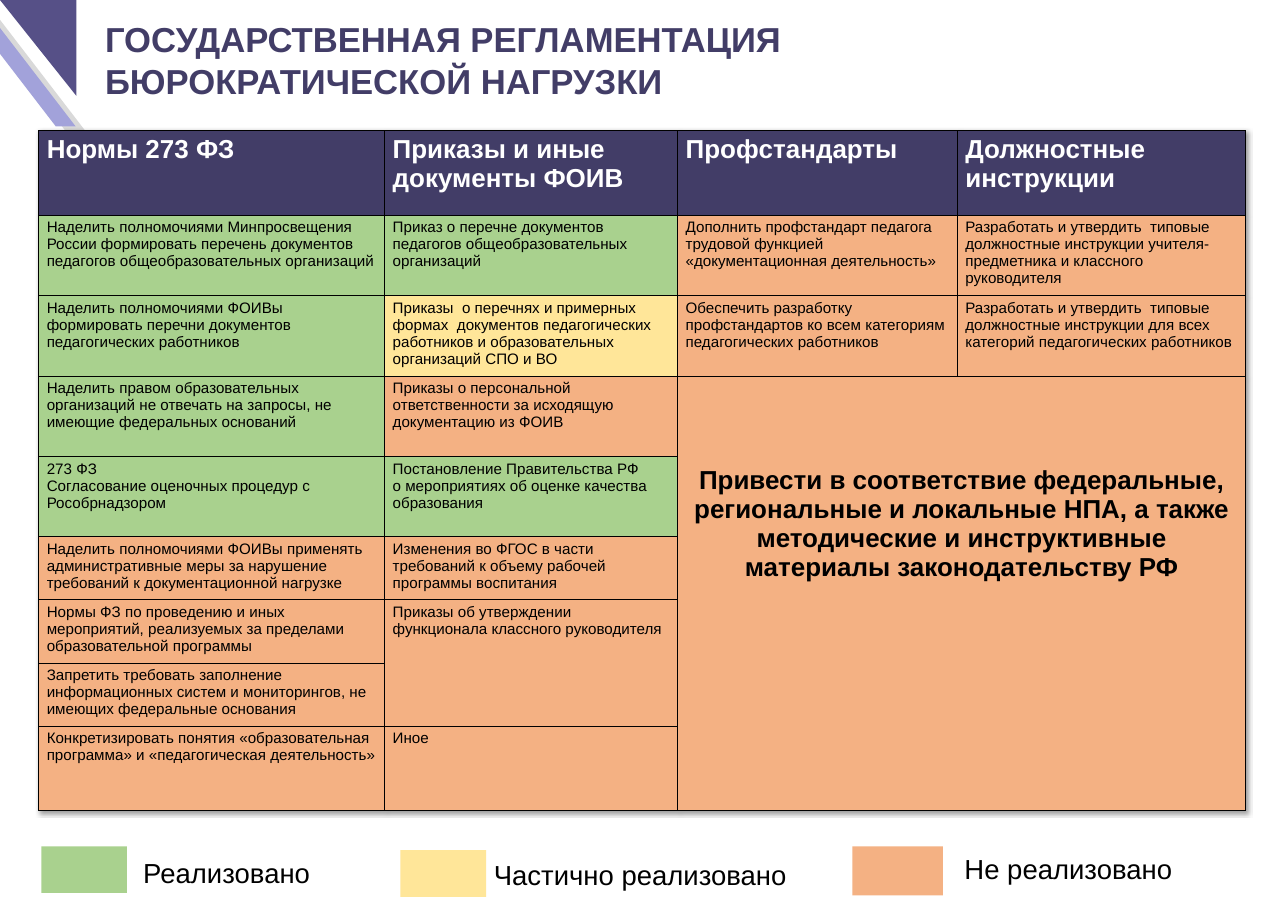
"""Build the slide on state regulation of the bureaucratic load."""
import lxml.etree
import pptx
import pptx.dml.color
import pptx.enum.shapes
import pptx.enum.text
import pptx.oxml
import pptx.oxml.ns
import pptx.util

RGB = pptx.dml.color.RGBColor
SHAPE = pptx.enum.shapes.MSO_SHAPE
ALIGN = pptx.enum.text.PP_ALIGN
INCH = pptx.util.Inches

NAVY = RGB(0x42, 0x3D, 0x67)
PURPLE = RGB(0x56, 0x50, 0x87)
LILAC = RGB(0xA2, 0xA2, 0xDA)
GREY = RGB(0xD9, 0xD9, 0xD9)
GREEN = RGB(0xA9, 0xD1, 0x8E)
YELLOW = RGB(0xFF, 0xE6, 0x99)
ORANGE = RGB(0xF4, 0xB1, 0x83)
BLACK = RGB(0, 0, 0)
WHITE = RGB(255, 255, 255)

COLS = [4.44, 3.76, 3.59, 3.69]
ROWS = [1.08] + [1.03] * 4 + [0.81] * 3 + [1.08]

HEADS = ["Нормы 273 ФЗ", "Приказы и иные документы ФОИВ",
         "Профстандарты", "Должностные инструкции"]
GOAL = ("Привести в соответствие федеральные, региональные и локальные НПА, "
        "а также методические и инструктивные материалы законодательству РФ")
NORMS = [
    ("Наделить полномочиями Минпросвещения России формировать перечень "
     "документов педагогов общеобразовательных организаций", GREEN),
    ("Наделить полномочиями ФОИВы\n"
     "формировать перечни документов педагогических работников", GREEN),
    ("Наделить правом образовательных организаций не отвечать на запросы, "
     "не имеющие федеральных оснований", GREEN),
    ("273 ФЗ\nСогласование оценочных процедур с Рособрнадзором", GREEN),
    ("Наделить полномочиями ФОИВы применять административные меры "
     "за нарушение требований к документационной нагрузке", ORANGE),
    ("Нормы ФЗ по проведению и иных мероприятий, реализуемых "
     "за пределами образовательной программы", ORANGE),
    ("Запретить требовать заполнение информационных систем и мониторингов, "
     "не имеющих федеральные основания", ORANGE),
    ("Конкретизировать понятия «образовательная программа» "
     "и «педагогическая деятельность»", ORANGE),
]
ORDERS = [
    ("Приказ о перечне документов педагогов общеобразовательных организаций",
     GREEN),
    ("Приказы  о перечнях и примерных формах  документов педагогических "
     "работников и образовательных организаций СПО и ВО", YELLOW),
    ("Приказы о персональной ответственности за исходящую документацию "
     "из ФОИВ", ORANGE),
    ("Постановление Правительства РФ\n"
     "о мероприятиях об оценке качества образования", GREEN),
    ("Изменения во ФГОС в части требований к объему рабочей программы "
     "воспитания", ORANGE),
    ("Приказы об утверждении функционала классного руководителя", ORANGE),
    ("", ORANGE),
    ("Иное", ORANGE),
]
SKILLS = [
    ("Дополнить профстандарт педагога трудовой функцией "
     "«документационная деятельность»", ORANGE),
    ("Обеспечить разработку профстандартов ко всем категориям "
     "педагогических работников", ORANGE),
    (GOAL, ORANGE),
]
DUTIES = [
    ("Разработать и утвердить  типовые должностные инструкции "
     "учителя-предметника и классного руководителя", ORANGE),
    ("Разработать и утвердить  типовые должностные инструкции для всех "
     "категорий педагогических работников", ORANGE),
]
LEGEND = [
    ((0.53, 10.86, 1.1, 0.6), GREEN, "Реализовано", (1.74, 10.93, 2.36, 0.53)),
    ((5.14, 10.91, 1.1, 0.6), YELLOW, "Частично реализовано",
     (6.24, 10.96, 4, 0.53)),
    ((10.94, 10.86, 1.16, 0.63), ORANGE, "Не реализовано",
     (12.28, 10.89, 2.9, 0.53)),
]


def put_text(frame, text, size, color, bold=False, align=ALIGN.LEFT):
    """Fill a text frame, one paragraph per line."""
    frame.text = text
    for par in frame.paragraphs:
        par.alignment = align
        par.font.name = "Arial"
        par.font.size = pptx.util.Pt(size)
        par.font.bold = bold
        par.font.color.rgb = color


def add_label(slide, area, text, size, color, bold=False, wrap=False):
    """Add a text box."""
    frame = slide.shapes.add_textbox(*map(INCH, area)).text_frame
    frame.word_wrap = wrap
    put_text(frame, text, size, color, bold)


def add_block(slide, kind, area, color):
    """Add a plain filled shape."""
    shape = slide.shapes.add_shape(kind, *map(INCH, area))
    shape.shadow.inherit = False
    shape.fill.solid()
    shape.fill.fore_color.rgb = color
    shape.line.fill.background()
    return shape


def add_corner(slide):
    """Draw the slanted stripes and triangle in the top left corner."""
    for left, top, color in [(-0.35, 0.13, GREY), (-0.53, 0, LILAC)]:
        band = add_block(slide, SHAPE.PARALLELOGRAM,
                         (left, top, 1.5, 1.62), color)
        band.adjustments[0] = 0.83
        band.element.spPr.xfrm.set("flipH", "1")
    wedge = add_block(slide, SHAPE.RIGHT_TRIANGLE, (0, 0, 0.98, 1.23), PURPLE)
    wedge.rotation = 180


def add_edges(cell):
    """Give a cell thin black borders."""
    props = cell._tc.get_or_add_tcPr()
    for side in "LRTB":
        props.append(pptx.oxml.parse_xml(
            f'<a:ln{side} {pptx.oxml.ns.nsdecls("a")} w="12700"><a:solidFill>'
            f'<a:srgbClr val="{BLACK}"/></a:solidFill></a:ln{side}>'))


def add_shade(table):
    """Give the table a soft shadow."""
    table._tbl.tblPr.insert(0, pptx.oxml.parse_xml(
        f'<a:effectLst {pptx.oxml.ns.nsdecls("a")}>'
        '<a:outerShdw blurRad="50800" dist="38100" dir="2700000">'
        '<a:srgbClr val="000000"><a:alpha val="40000"/></a:srgbClr>'
        '</a:outerShdw></a:effectLst>'))


def add_grid(slide):
    """Add the table of measures."""
    table = slide.shapes.add_table(
        len(ROWS), len(COLS), INCH(0.5), INCH(1.68),
        INCH(sum(COLS)), INCH(sum(ROWS))).table
    for col, width in zip(table.columns, COLS):
        col.width = INCH(width)
    for row, height in zip(table.rows, ROWS):
        row.height = INCH(height)
    add_shade(table)
    for cell in table.iter_cells():
        add_edges(cell)
        cell.fill.solid()
        cell.fill.fore_color.rgb = ORANGE
    for col, items in enumerate([NORMS, ORDERS, SKILLS, DUTIES]):
        head = table.cell(0, col)
        head.fill.fore_color.rgb = NAVY
        put_text(head.text_frame, HEADS[col], 24, WHITE, True)
        for row, (text, color) in enumerate(items, 1):
            cell = table.cell(row, col)
            cell.fill.fore_color.rgb = color
            put_text(cell.text_frame, text, 14, BLACK)
    table.cell(6, 1).merge(table.cell(7, 1))
    goal = table.cell(3, 2)
    goal.merge(table.cell(8, 3))
    goal.margin_top = INCH(1.15)
    put_text(goal.text_frame, GOAL, 24, BLACK, True, ALIGN.CENTER)


def main():
    """Build and save the slide."""
    deck = pptx.Presentation()
    deck.slide_width, deck.slide_height = INCH(16.53), INCH(11.69)
    slide = deck.slides.add_slide(deck.slide_layouts[6])
    add_corner(slide)
    add_label(slide, (1.25, 0.18, 11.46, 1.18),
              "ГОСУДАРСТВЕННАЯ РЕГЛАМЕНТАЦИЯ БЮРОКРАТИЧЕСКОЙ НАГРУЗКИ",
              32, NAVY, True, True)
    add_grid(slide)
    for box, color, text, area in LEGEND:
        add_block(slide, SHAPE.RECTANGLE, box, color)
        add_label(slide, area, text, 25.4, BLACK)
    deck.save("out.pptx")


if __name__ == "__main__":
    main()
